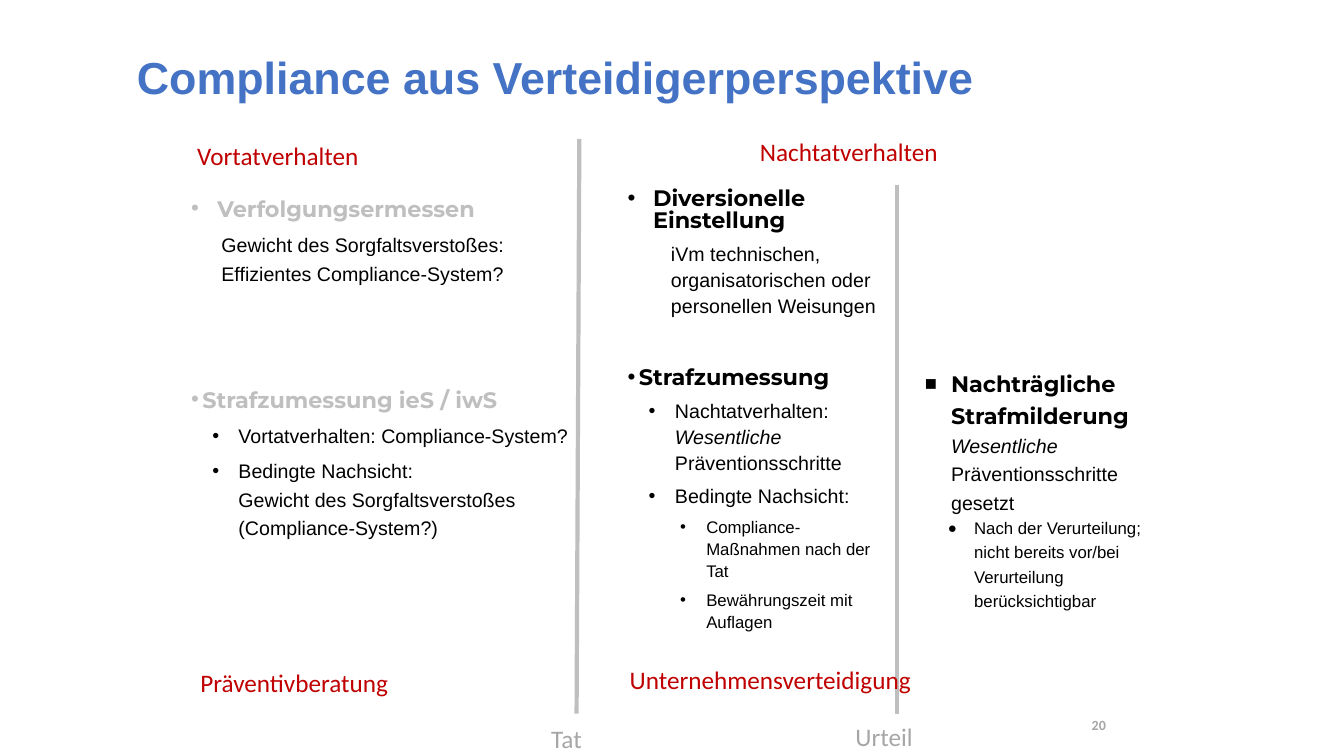
from dataclasses import dataclass

from lxml import etree
from pptx import Presentation
from pptx.dml.color import RGBColor
from pptx.enum.shapes import MSO_CONNECTOR
from pptx.enum.text import MSO_ANCHOR, MSO_AUTO_SIZE, PP_ALIGN
from pptx.oxml.ns import qn
from pptx.util import Cm, Pt

STRAIGHT = MSO_CONNECTOR.STRAIGHT
TOP, MIDDLE = MSO_ANCHOR.TOP, MSO_ANCHOR.MIDDLE
FIXED, GROW = MSO_AUTO_SIZE.NONE, MSO_AUTO_SIZE.SHAPE_TO_FIT_TEXT
LEFT, RIGHT = PP_ALIGN.LEFT, PP_ALIGN.RIGHT

COLORS = {"title": "4472C4", "label": "C00000", "text": "000000",
          "faded": "BFBFBF", "muted": "A6A6A6"}
LABEL_HEIGHT = 1.02
HANG = -0.66


@dataclass
class Box:
    left: float
    top: float
    width: float
    height: float

    def area(self, dx, dy, width, height):
        return Box(self.left + dx, self.top + dy, width, height)


@dataclass
class Style:
    font: str
    size: float
    color: str = "text"
    bold: bool = False
    italic: bool = False


TITLE = Style("Arial", 32, "title", bold=True)
LABEL = Style("Calibri", 18, "label")
EVENT = Style("Calibri", 18, "muted")
PAGE = Style("Calibri", 10, "muted", bold=True)
HEADING = Style("Montserrat", 16, bold=True)
FADED_HEADING = Style("Montserrat", 16, "faded", bold=True)
DETAIL = Style("Arial", 14)
EMPHASIS = Style("Arial", 14, italic=True)
SMALL = Style("Arial", 12)


def add_frame(slide, box, anchor=TOP, auto_size=FIXED):
    shape = slide.shapes.add_textbox(Cm(box.left), Cm(box.top),
                                     Cm(box.width), Cm(box.height))
    frame = shape.text_frame
    frame.word_wrap = True
    frame.auto_size = auto_size
    frame.vertical_anchor = anchor
    return frame


def add_run(paragraph, text, style):
    run = paragraph.add_run()
    run.text = text
    font = run.font
    font.name, font.size = style.font, Pt(style.size)
    font.bold, font.italic = style.bold, style.italic
    font.color.rgb = RGBColor.from_string(COLORS[style.color])


def add_line(slide, box, text, style, anchor=TOP, auto_size=GROW, align=LEFT):
    paragraph = add_frame(slide, box, anchor, auto_size).paragraphs[0]
    paragraph.alignment = align
    add_run(paragraph, text, style)
    return paragraph


def add_points(slide, box, spacing, points):
    frame = add_frame(slide, box)
    for number, (level, margin, indent, before, bullet, runs) in enumerate(points):
        paragraph = frame.add_paragraph() if number else frame.paragraphs[0]
        paragraph.level = level
        paragraph.line_spacing = spacing
        paragraph.space_before = Pt(before)
        properties = paragraph._p.get_or_add_pPr()
        properties.set("marL", str(Cm(margin)))
        properties.set("indent", str(Cm(indent)))
        if bullet:
            if bullet != "•":
                etree.SubElement(properties, qn("a:buSzPct")).set("val", "90000")
            etree.SubElement(properties, qn("a:buFont")).set("typeface", "Arial")
            etree.SubElement(properties, qn("a:buChar")).set("char", bullet)
        for text, style in runs:
            for row, line in enumerate(text.split("\n")):
                if row:
                    paragraph.add_line_break()
                add_run(paragraph, line, style)
    return frame


def add_divider(slide, start, end):
    divider = slide.shapes.add_connector(STRAIGHT, *map(Cm, start + end))
    divider.line.width = Pt(3)
    divider.line.color.rgb = RGBColor.from_string(COLORS["faded"])
    etree.SubElement(divider._element.spPr, qn("a:effectLst"))


def add_title(slide, box):
    title = add_line(slide, box, "Compliance aus Verteidigerperspektive", TITLE,
                     MIDDLE, FIXED)
    title.line_spacing = 0.9


def add_before_offence(slide, box):
    add_line(slide, box.area(0.15, 0.1, 9, LABEL_HEIGHT), "Vortatverhalten", LABEL)
    add_points(slide, box.area(0, 1.35, box.width, 11.1), 1.2, [
        (0, 0.66, HANG, 10, "•", [("Verfolgungsermessen", FADED_HEADING)]),
        (1, 0.76, 0, 5, None,
         [("Gewicht des Sorgfaltsverstoßes:\nEffizientes Compliance-System?", DETAIL)]),
        (0, 0.28, HANG, 68, "•", [("Strafzumessung ieS / iwS", FADED_HEADING)]),
        (1, 1.19, HANG, 5, "•", [("Vortatverhalten: Compliance-System?", DETAIL)]),
        (1, 1.19, HANG, 5, "•",
         [("Bedingte Nachsicht:\nGewicht des Sorgfaltsverstoßes (Compliance-System?)",
           DETAIL)]),
    ])
    add_line(slide, box.area(0.23, 13.39, 9, LABEL_HEIGHT), "Präventivberatung", LABEL)


def add_after_offence(slide, box):
    add_line(slide, box.area(3.33, 0, 9, LABEL_HEIGHT), "Nachtatverhalten", LABEL)
    measures = add_points(slide, box.area(0, 1.35, box.width, 12.3), 1.1, [
        (0, 0.64, -0.64, 10, "•", [("Diversionelle Einstellung", HEADING)]),
        (1, 1.09, 0, 5, None,
         [("iVm technischen, organisatorischen oder personellen Weisungen", DETAIL)]),
        (0, 0.28, HANG, 31, "•", [("Strafzumessung", HEADING)]),
        (1, 1.19, HANG, 5, "•",
         [("Nachtatverhalten: ", DETAIL), ("Wesentliche ", EMPHASIS),
          ("Präventionsschritte", DETAIL)]),
        (1, 1.19, HANG, 5, "•", [("Bedingte Nachsicht:", DETAIL)]),
        (2, 1.98, HANG, 5, "•", [("Compliance-Maßnahmen nach der Tat", SMALL)]),
        (2, 1.98, HANG, 5, "•", [("Bewährungszeit mit Auflagen", SMALL)]),
    ])
    measures.paragraphs[0].line_spacing = 0.8
    add_line(slide, box.area(0.05, 13.31, 10.2, LABEL_HEIGHT),
             "Unternehmensverteidigung", LABEL)


def add_after_judgment(slide, box):
    add_points(slide, box, 1.2, [
        (0, 0.66, HANG, 8, "■",
         [("Nachträgliche Strafmilderung ", HEADING), ("Wesentliche ", EMPHASIS),
          ("Präventionsschritte gesetzt", DETAIL)]),
        (2, 1.24, HANG, 0, "●",
         [("Nach der Verurteilung; nicht bereits vor/bei Verurteilung "
           "berücksichtigbar", SMALL)]),
    ])


def add_events(slide, box):
    bottom = box.top + box.height
    offence, judgment = box.left, box.left + box.width
    add_divider(slide, (offence + 0.07, box.top), (offence, bottom))
    add_divider(slide, (judgment, box.top + 1.15), (judgment, bottom))
    add_line(slide, Box(offence - 0.89, bottom + 0.13, 1.8, LABEL_HEIGHT), "Tat", EVENT)
    add_line(slide, Box(judgment - 1.29, bottom + 0.08, 2.72, LABEL_HEIGHT),
             "Urteil", EVENT)


def main():
    deck = Presentation()
    deck.slide_width, deck.slide_height = Cm(33.87), Cm(19.05)
    slide = deck.slides.add_slide(deck.slide_layouts[6])
    add_events(slide, Box(14.53, 3.5, 8.07, 14.48))
    add_title(slide, Box(3.2, 0.71, 26.42, 2.62))
    add_before_offence(slide, Box(4.57, 3.3, 10.6, 14.4))
    add_after_offence(slide, Box(15.57, 3.3, 7.11, 14.4))
    add_after_judgment(slide, Box(23.06, 9.07, 6.22, 7.85))
    add_line(slide, Box(26.7, 17.75, 1.42, LABEL_HEIGHT), "20", PAGE,
             MIDDLE, FIXED, RIGHT)
    deck.save("out.pptx")


if __name__ == "__main__":
    main()
